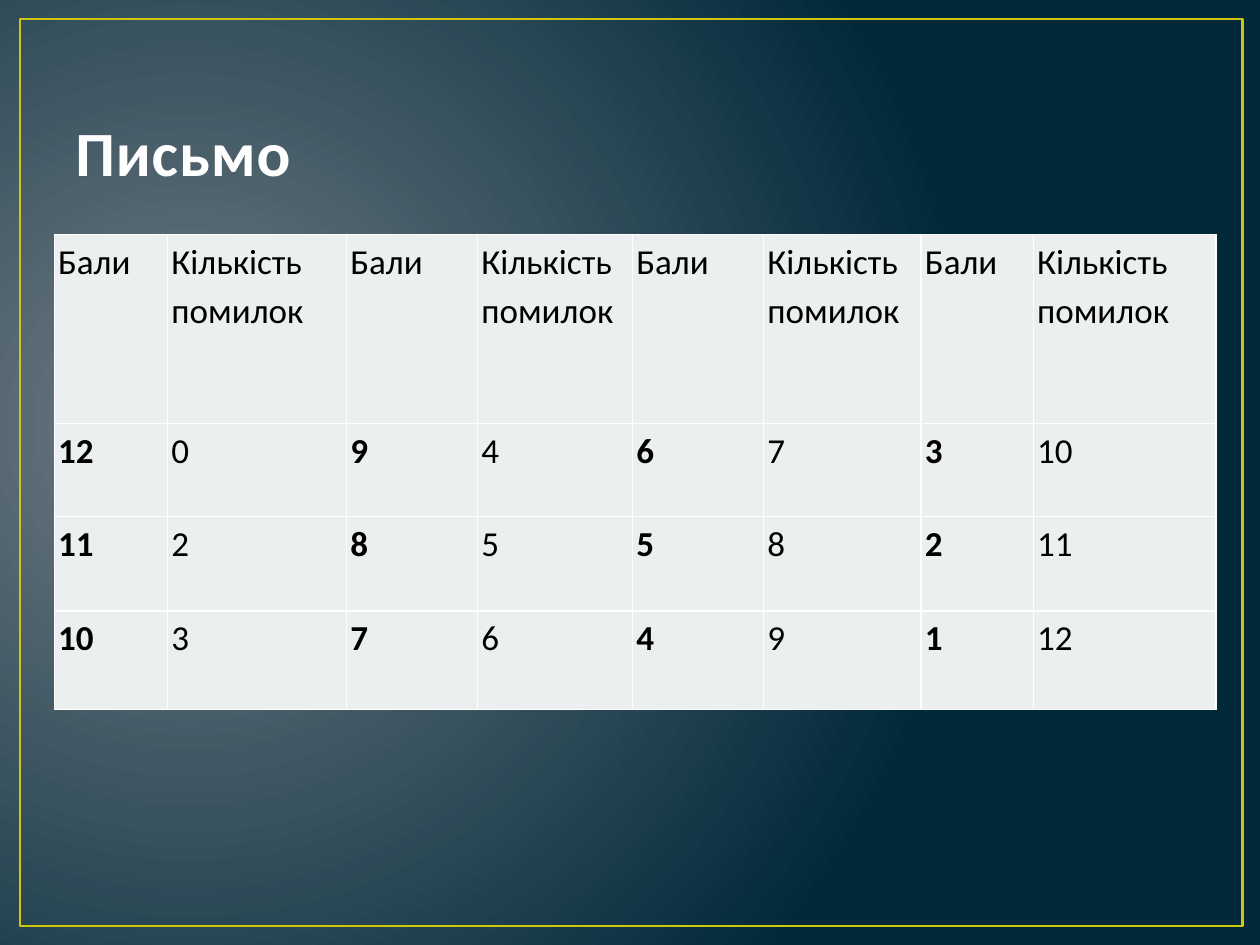
from dataclasses import dataclass

import lxml.etree
import pptx
import pptx.dml.color
import pptx.enum.shapes
import pptx.enum.text
import pptx.oxml
import pptx.oxml.ns
import pptx.slide
import pptx.table
import pptx.text.text
import pptx.util

Pt = pptx.util.Pt
FONT = "Calibri"
COLORS = {
    "glow": "717C84",
    "night": "01293A",
    "frame": "CFC60D",
    "title": "FEFEFE",
    "title_outline": "384F55",
    "cell": "ECEFF0",
    "grid": "FFFFFF",
    "text": "000000",
}
COLUMN_WIDTHS = [64.8, 102.2, 74.9, 88.6, 74.9, 90, 64.1, 104.4]
ROW_HEIGHTS = [108, 53.3, 54, 56.2]
ERROR_COUNTS = [0, *range(2, 13)]  # allowed errors for 12, 11, ... 1 points
SCORES_PER_COLUMN = 3


@dataclass
class Entry:
    text: str
    bold: bool = False


def rgb(name: str) -> pptx.dml.color.RGBColor:
    return pptx.dml.color.RGBColor.from_string(COLORS[name])


def line_xml(tag: str, width: float, color: str) -> lxml.etree._Element:
    return pptx.oxml.parse_xml(
        f'<a:{tag} {pptx.oxml.ns.nsdecls("a")} w="{Pt(width)}"><a:solidFill>'
        f'<a:srgbClr val="{COLORS[color]}"/></a:solidFill></a:{tag}>'
    )


def format_run(run: pptx.text.text._Run, size: float, color: str, bold: bool) -> None:
    run.font.name = FONT
    run.font.size = Pt(size)
    run.font.bold = bold
    run.font.color.rgb = rgb(color)


def paint_background(slide: pptx.slide.Slide) -> None:
    fill = slide.background.fill
    fill.gradient()
    for stop, color in zip(fill.gradient_stops, ("glow", "night")):
        stop.color.rgb = rgb(color)
    # Swap the linear direction for a circular one
    linear = slide.element.xpath(".//p:bg//a:lin")[0]
    linear.getparent().replace(linear, pptx.oxml.parse_xml(
        f'<a:path {pptx.oxml.ns.nsdecls("a")} path="circle">'
        '<a:fillToRect l="15000" t="50000" r="85000" b="60000"/></a:path>'
    ))


def add_frame(slide: pptx.slide.Slide) -> None:
    frame = slide.shapes.add_shape(
        pptx.enum.shapes.MSO_SHAPE.RECTANGLE, Pt(11.5), Pt(10.8), Pt(698.4), Pt(518.4))
    frame.shadow.inherit = False
    frame.fill.background()
    frame.line.color.rgb = rgb("frame")
    frame.line.width = Pt(1.5)


def add_title(slide: pptx.slide.Slide, text: str) -> None:
    title = slide.shapes.add_textbox(Pt(36), Pt(21.6), Pt(648), Pt(90)).text_frame
    title.word_wrap = True
    title.vertical_anchor = pptx.enum.text.MSO_ANCHOR.BOTTOM
    title.text = text
    run = title.paragraphs[0].runs[0]
    format_run(run, 36, "title", True)
    properties = run.font._element if hasattr(run.font, "_element") else run._r.get_or_add_rPr()
    properties.set("spc", "50")
    properties.insert(0, line_xml("ln", 1.05, "title_outline"))


def fill_cell(cell: pptx.table._Cell, entry: Entry) -> None:
    cell.margin_left = cell.margin_right = Pt(2.16)
    cell.margin_top = cell.margin_bottom = Pt(0)
    cell.text_frame.text = entry.text
    paragraph = cell.text_frame.paragraphs[0]
    paragraph.alignment = pptx.enum.text.PP_ALIGN.JUSTIFY
    paragraph.line_spacing = 1.15
    format_run(paragraph.runs[0], 20, "text", entry.bold)
    # Borders come before the fill in the cell properties
    for side in ("lnL", "lnR", "lnT", "lnB"):
        cell._tc.get_or_add_tcPr().append(line_xml(side, 1, "grid"))
    cell.fill.solid()
    cell.fill.fore_color.rgb = rgb("cell")


def score_rows() -> list[list[Entry]]:
    rows = [[Entry("Бали"), Entry("Кількість помилок")] * 4]
    for first in range(SCORES_PER_COLUMN):
        row = []
        for index in range(first, len(ERROR_COUNTS), SCORES_PER_COLUMN):
            row += [Entry(str(12 - index), True), Entry(str(ERROR_COUNTS[index]))]
        rows.append(row)
    return rows


def add_score_table(slide: pptx.slide.Slide) -> None:
    scores = slide.shapes.add_table(
        len(ROW_HEIGHTS), len(COLUMN_WIDTHS), Pt(31), Pt(133.9),
        Pt(sum(COLUMN_WIDTHS)), Pt(sum(ROW_HEIGHTS))).table
    scores.first_row = scores.horz_banding = False
    for column, width in zip(scores.columns, COLUMN_WIDTHS):
        column.width = Pt(width)
    for row, height, entries in zip(scores.rows, ROW_HEIGHTS, score_rows()):
        row.height = Pt(height)
        for cell, entry in zip(row.cells, entries):
            fill_cell(cell, entry)


def main() -> None:
    presentation = pptx.Presentation()
    presentation.slide_width, presentation.slide_height = Pt(720), Pt(540)
    slide = presentation.slides.add_slide(presentation.slide_layouts[6])
    paint_background(slide)
    add_frame(slide)
    add_title(slide, "Письмо")
    add_score_table(slide)
    presentation.save("out.pptx")


if __name__ == "__main__":
    main()
